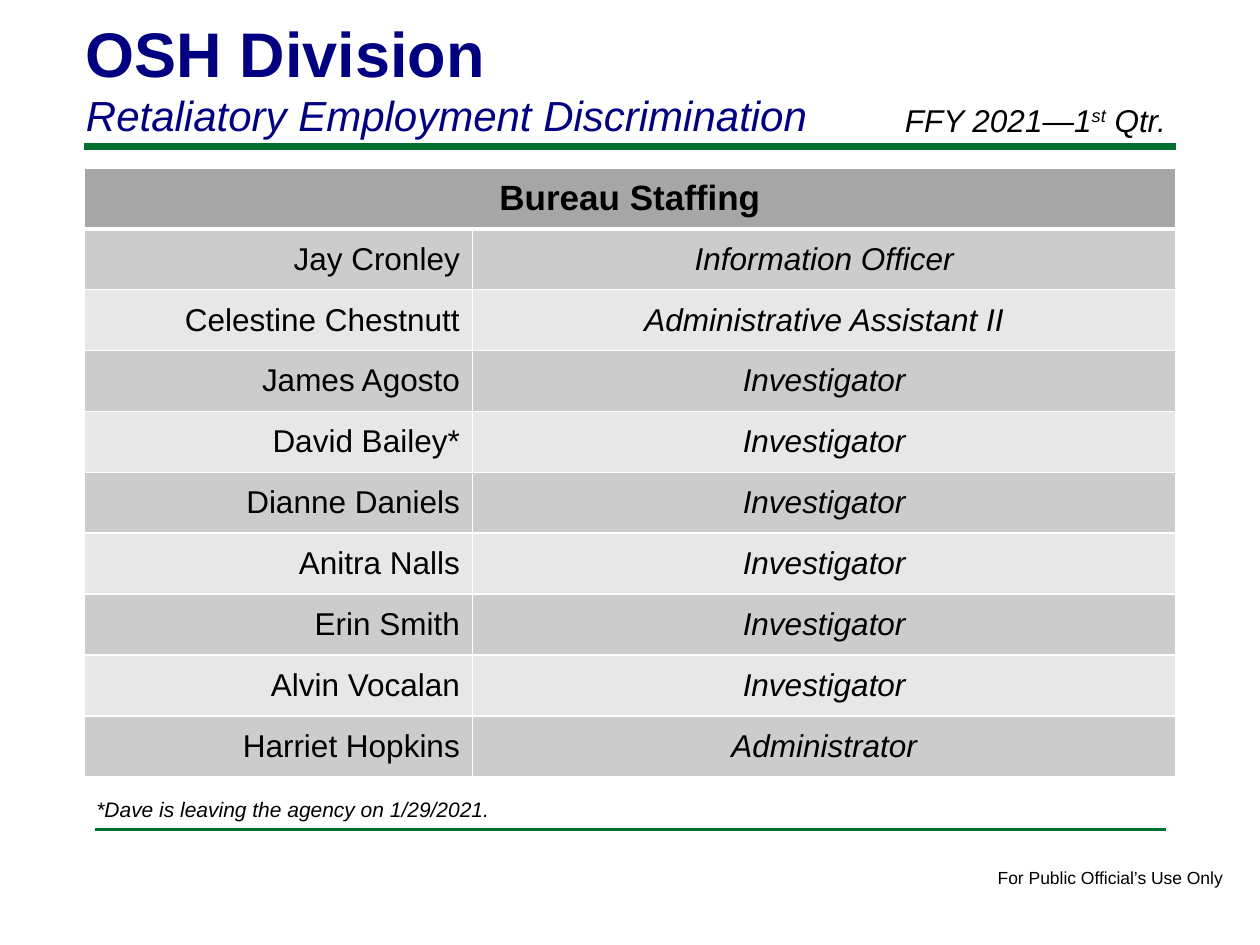
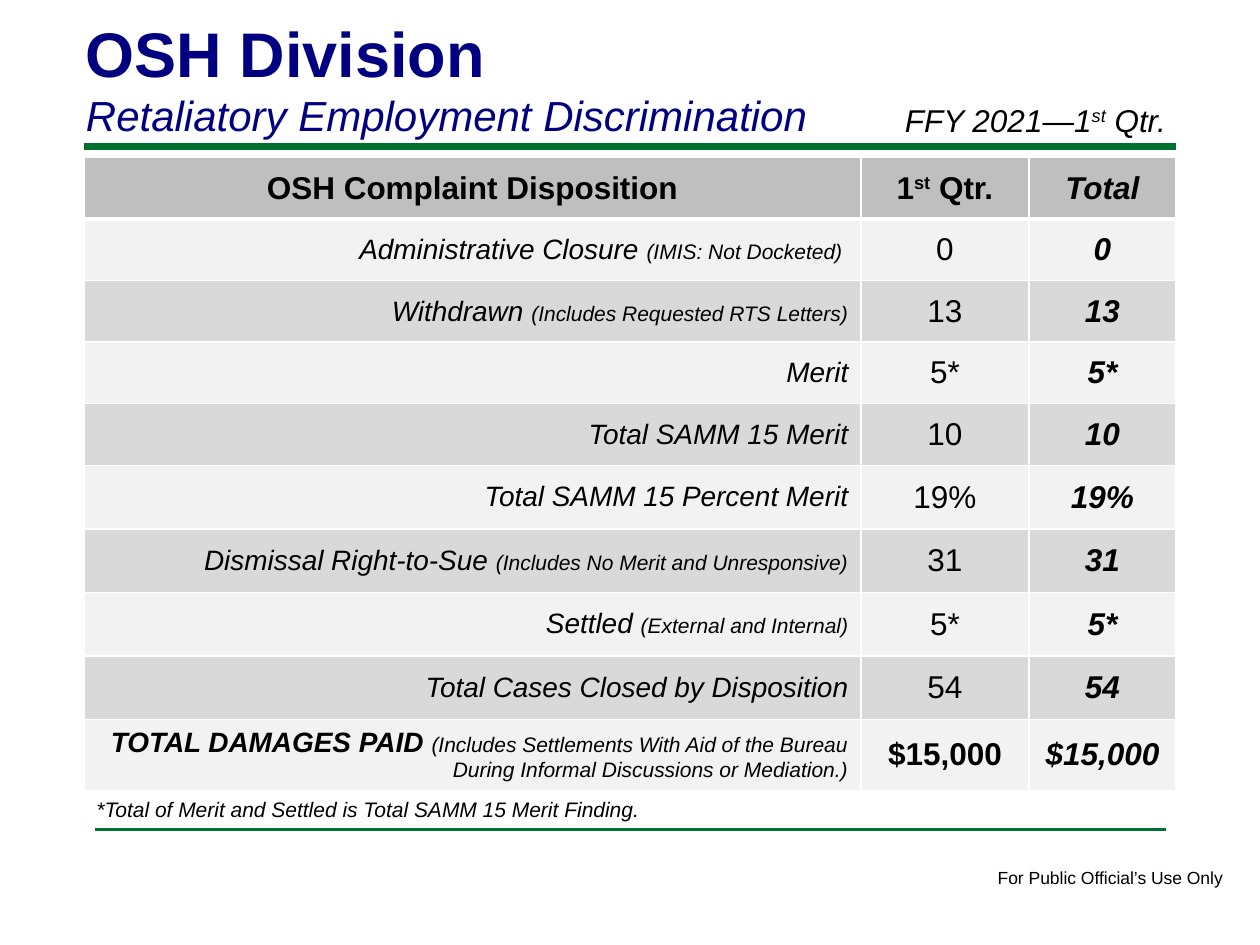
"""Build two staffing and complaint slides for the OSH Division."""
from dataclasses import dataclass

from lxml.etree import SubElement
from pptx import Presentation
from pptx.dml.color import RGBColor
from pptx.enum.shapes import MSO_CONNECTOR
from pptx.enum.text import MSO_ANCHOR, MSO_AUTO_SIZE, PP_ALIGN
from pptx.oxml.ns import qn
from pptx.util import Pt


@dataclass(frozen=True)
class Theme:
    font: str = "Arial"
    navy: str = "000080"
    green: str = "007030"
    black: str = "000000"
    white: str = "FFFFFF"
    staff: tuple = ("A6A6A6", "CCCCCC", "E7E7E7")
    cases: tuple = ("BFBFBF", "F2F2F2", "D9D9D9")
    title: int = 36
    sub: int = 24
    head: int = 20
    body: int = 18
    label: int = 16
    note: int = 12
    foot: int = 10


LOOK = Theme()
LEFT, CENTER, RIGHT = PP_ALIGN.LEFT, PP_ALIGN.CENTER, PP_ALIGN.RIGHT
EDGE = 48

STAFF = [
    ("Jay Cronley", "Information Officer"),
    ("Celestine Chestnutt", "Administrative Assistant II"),
    ("James Agosto", "Investigator"),
    ("David Bailey*", "Investigator"),
    ("Dianne Daniels", "Investigator"),
    ("Anitra Nalls", "Investigator"),
    ("Erin Smith", "Investigator"),
    ("Alvin Vocalan", "Investigator"),
    ("Harriet Hopkins", "Administrator"),
]
CASES = [
    ("Administrative Closure ", "(IMIS: Not Docketed) ", "0"),
    ("Withdrawn ", "(Includes Requested RTS Letters)", "13"),
    ("Merit", "", "5*"),
    ("Total SAMM 15 Merit", "", "10"),
    ("Total SAMM 15 Percent Merit", "", "19%"),
    ("Dismissal Right-to-Sue ", "(Includes No Merit and Unresponsive)", "31"),
    ("Settled ", "(External and Internal)", "5*"),
    ("Total Cases Closed by Disposition", "", "54"),
    ("TOTAL DAMAGES PAID ", "(Includes Settlements With Aid of the Bureau "
     "During Informal Discussions or Mediation.)", "$15,000"),
]


def tint(text):
    return RGBColor.from_string(text)


def write(para, runs, color=LOOK.black, align=LEFT):
    """Add (text, size, flags) runs: b is bold, i italic, ^ superscript."""
    para.alignment = align
    for text, size, flags in runs:
        run = para.add_run()
        run.text = text
        style = {"name": LOOK.font, "size": Pt(size),
                 "bold": "b" in flags, "italic": "i" in flags}
        for key, value in style.items():
            setattr(run.font, key, value)
        run.font.color.rgb = tint(color)
        if "^" in flags:
            run.font._element.set("baseline", "30000")


def label(slide, area, lines, color=LOOK.black, wrap=True):
    """Add a text box with one paragraph per list of runs."""
    frame = slide.shapes.add_textbox(*map(Pt, area)).text_frame
    frame.word_wrap = wrap
    frame.auto_size = MSO_AUTO_SIZE.SHAPE_TO_FIT_TEXT
    for num, runs in enumerate(lines):
        para = frame.add_paragraph() if num else frame.paragraphs[0]
        write(para, runs, color)


def rule(slide, start, end, top, width):
    """Draw a level green line without a shadow."""
    line = slide.shapes.add_connector(
        MSO_CONNECTOR.STRAIGHT, Pt(start), Pt(top), Pt(end), Pt(top))
    line.line.color.rgb = tint(LOOK.green)
    line.line.width = Pt(width)
    SubElement(line._element.spPr, qn("a:effectLst"))


def border(cell, row):
    """Give a cell white edges, with a thick one under the header."""
    props = cell._tc.get_or_add_tcPr()
    widths = {"L": 1, "R": 1, "T": 3 if row == 1 else 1, "B": 1 if row else 3}
    for side, width in widths.items():
        edge = SubElement(props, qn(f"a:ln{side}"), w=str(Pt(width)))
        fill = SubElement(edge, qn("a:solidFill"))
        SubElement(fill, qn("a:srgbClr"), val=LOOK.white)


def grid(slide, top, cols, sizes, rows, fills):
    """Add a banded table of (runs, alignment) cells."""
    table = slide.shapes.add_table(
        len(sizes), len(cols), Pt(EDGE), Pt(top), Pt(sum(cols)),
        Pt(sum(sizes))).table
    for col, width in zip(table.columns, cols):
        col.width = Pt(width)
    head, odd, even = fills
    for num, (size, cells) in enumerate(zip(sizes, rows)):
        table.rows[num].height = Pt(size)
        shade = (odd if num % 2 else even) if num else head
        for cell in table.rows[num].cells:
            border(cell, num)
            cell.fill.solid()
            cell.fill.fore_color.rgb = tint(shade)
            cell.vertical_anchor = MSO_ANCHOR.MIDDLE
        for cell, (runs, align) in zip(table.rows[num].cells, cells):
            write(cell.text_frame.paragraphs[0], runs, align=align)
    return table


def page(deck, note, width):
    """Add a slide with the shared title, rules, footer and a footnote."""
    slide = deck.slides.add_slide(deck.slide_layouts[6])
    rule(slide, EDGE, 672, 84, 4)
    rule(slide, 54, 666, 474, 2)
    label(slide, (563, 492, 145, 19.4),
          [[("For Public Official’s Use Only", LOOK.foot, "")]], wrap=False)
    label(slide, (42, 4.5, 594, 80),
          [[("OSH Division", LOOK.title, "b")],
           [("Retaliatory Employment Discrimination", LOOK.sub, "i")]],
          LOOK.navy)
    label(slide, (510, 54, 180, 29),
          [[("FFY 2021—1", LOOK.body, "i"), ("st", LOOK.body, "i^"),
            (" Qtr.", LOOK.body, "i")]])
    label(slide, (EDGE, 451.8, width, 21.8),
          [[(note, LOOK.note, "i")]], wrap=False)
    return slide


def staff(deck):
    """Build the bureau staffing slide."""
    slide = page(deck, "*Dave is leaving the agency on 1/29/2021.", 240.5)
    rows = [[([("Bureau Staffing", LOOK.head, "b")], CENTER)]]
    rows += [[([(name, LOOK.body, "")], RIGHT),
              ([(role, LOOK.body, "i")], CENTER)] for name, role in STAFF]
    table = grid(slide, 96, [222, 402], [34.8] * len(rows), rows, LOOK.staff)
    table.cell(0, 0).merge(table.cell(0, 1))


def cases(deck):
    """Build the complaint disposition slide."""
    slide = page(
        deck, "*Total of Merit and Settled is Total SAMM 15 Merit Finding.",
        327.6)
    size = LOOK.body
    rows = [[([("OSH Complaint Disposition", size, "b")], CENTER),
             ([("1", size, "b"), ("st", size, "b^"), (" Qtr.", size, "b")],
              CENTER),
             ([("Total", size, "bi")], CENTER)]]
    for name, note, value in CASES:
        bold = "b" if name.isupper() else ""
        runs = [(name, LOOK.label, bold + "i")]
        if note:
            runs.append((note, LOOK.note, "i"))
        rows.append([(runs, RIGHT), ([(value, size, bold)], CENTER),
                     ([(value, size, "bi")], CENTER)])
    sizes = [35.2] * 5 + [36.3] * 4 + [40.8]
    grid(slide, 90, [444, 96, 84], sizes, rows, LOOK.cases)


def main():
    deck = Presentation()
    deck.slide_width, deck.slide_height = Pt(720), Pt(540)
    staff(deck)
    cases(deck)
    deck.save("out.pptx")


if __name__ == "__main__":
    main()
